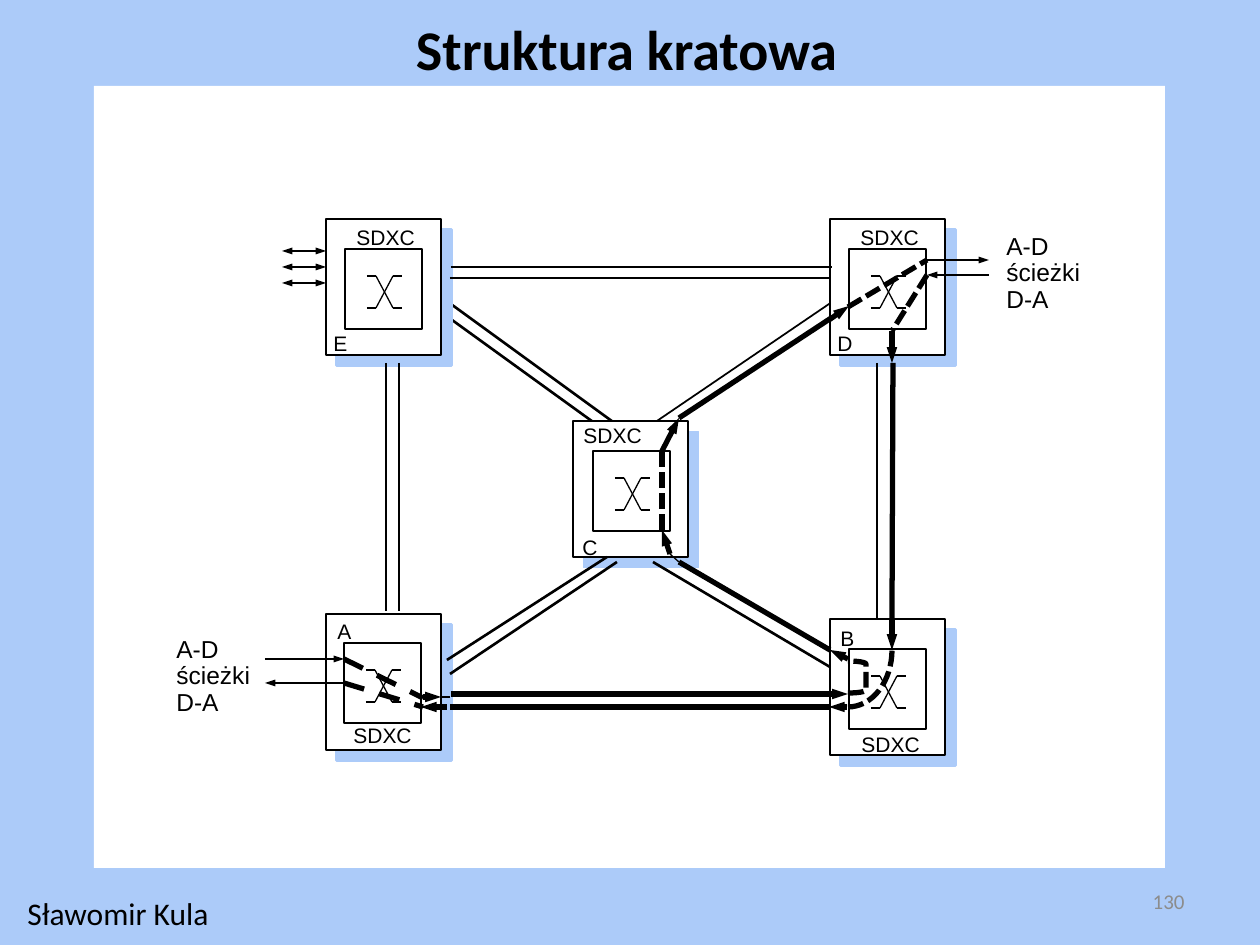
from dataclasses import dataclass
from math import cos, pi, sin
from typing import Optional

from lxml.etree import SubElement
from pptx import Presentation
from pptx.dml.color import RGBColor
from pptx.enum.dml import MSO_LINE
from pptx.enum.shapes import MSO_CONNECTOR, MSO_SHAPE
from pptx.enum.text import MSO_ANCHOR, MSO_AUTO_SIZE, PP_ALIGN
from pptx.oxml.ns import qn
from pptx.util import Emu, Pt

EMU_PER_PX = 914400 / 126
BLACK, WHITE, SKY, GREY = "000000", "FFFFFF", "ACCBF9", "8C8C8C"
DASH, DOT = MSO_LINE.DASH, MSO_LINE.SQUARE_DOT


@dataclass
class Node:
    name: str
    frame: tuple[int, int]
    switch: tuple[int, int]
    caption: tuple[int, int]
    letter: tuple[int, int]
    weight: float = 1.5


@dataclass
class Line:
    begin: tuple[int, int]
    end: tuple[int, int]
    weight: float = 1.5
    arrows: str = ""
    dash: Optional[MSO_LINE] = None
    begin_node: str = ""


@dataclass
class Label:
    text: str
    box: tuple[int, int, int, int]
    size: int
    font: str = "Arial"
    color: str = BLACK
    bold: bool = False


NODES = [
    Node("C", (573, 421), (593, 451), (571, 416), (570, 528), 0.75),
    Node("A", (326, 614), (344, 643), (341, 716), (325, 612)),
    Node("E", (326, 219), (345, 249), (344, 218), (321, 324)),
    Node("B", (830, 619), (849, 649), (849, 725), (828, 619)),
    Node("D", (830, 219), (849, 249), (848, 218), (825, 324)),
]
LINKS_BEHIND_NODES = [
    Line((832, 302), (654, 423), 1),
    Line((848, 307), (679, 418), 3),
    Line((444, 299), (620, 427)),
    Line((423, 299), (600, 427)),
]
LINKS = [
    Line((386, 363), (386, 611), 1),
    Line((399, 363), (399, 611), 1),
    Line((877, 363), (877, 619)),
    Line((893, 363), (892, 619), 3),
    Line((450, 707), (830, 707), 3),
    Line((451, 694), (832, 694), 3),
    Line((450, 278), (830, 278)),
    Line((451, 267), (832, 267)),
    Line((447, 660), (607, 557)),
    Line((617, 562), (450, 674)),
    Line((679, 562), (830, 650), 3),
    Line((653, 562), (830, 667)),
]
PORTS = [Line((282, y), (326, y), arrows="both") for y in (251, 267, 283)]
PATHS = [
    Line((265, 659), (344, 659), arrows="end"),
    Line((423, 697), (441, 697), 3, "end"),
    Line((344, 659), (423, 698), 3, dash=DASH),
    Line((830, 694), (848, 694), 3, "end"),
    Line((848, 659), (830, 650), 3, "end"),
    Line((670, 554), (662, 530), 3, "end"),
    Line((670, 554), (679, 562), 0.75),
    Line((450, 697), (441, 697), 0.75),
    Line((662, 530), (662, 451), 3, dash=DOT),
    Line((662, 451), (679, 418), 3, "end"),
    Line((829, 320), (849, 306), 3, "end"),
    Line((927, 260), (989, 260), arrows="end"),
    Line((848, 307), (927, 260), 3, dash=DOT),
    Line((989, 275), (927, 275), arrows="end"),
    Line((892, 331), (892, 363), 3, "end"),
    Line((927, 275), (892, 331), 3, dash=DOT),
    Line((847, 707), (829, 707), 3, "end"),
    Line((892, 619), (892, 650), 3, "end"),
    Line((447, 707), (421, 707), 3, "end"),
    Line((344, 683), (265, 683), arrows="end", begin_node="A"),
    Line((344, 683), (423, 707), 3, dash=DASH, begin_node="A"),
]
PATH_ENDS = "A-D\nścieżki\nD-A"
LABELS = [
    Label(PATH_ENDS, (164, 631, 100, 93), 14),
    Label(PATH_ENDS, (994, 228, 100, 93), 14),
    Label("Sławomir Kula", (15, 888, 209, 50), 18, "Calibri"),
]


def px(length: float) -> Emu:
    return Emu(round(length * EMU_PER_PX))


def color(value: str) -> RGBColor:
    return RGBColor.from_string(value)


def apply(target, values: dict) -> None:
    for name, value in values.items():
        setattr(target, name, value)


def set_line(shape, weight: float, dash: Optional[MSO_LINE] = None) -> None:
    shape.line.fill.solid()
    shape.line.color.rgb = color(BLACK)
    apply(shape.line, {"width": Pt(weight), "dash_style": dash})


def draw_rectangle(slide, box: tuple, weight: float = 0):
    shape = slide.shapes.add_shape(MSO_SHAPE.RECTANGLE, *map(px, box))
    shape.shadow.inherit = False
    shape.fill.solid()
    shape.fill.fore_color.rgb = color(WHITE)
    if weight:
        set_line(shape, weight)
    else:
        shape.line.fill.background()
    return shape


def add_sky_shadow(shape) -> None:
    effects = shape._element.spPr.find(qn("a:effectLst"))
    shadow = SubElement(effects, qn("a:outerShdw"), dist=str(Pt(8.5)),
                        dir="2700000", algn="ctr", rotWithShape="0")
    SubElement(shadow, qn("a:srgbClr"), val=SKY)


def draw_line(slide, line: Line, switches: dict) -> None:
    connector = slide.shapes.add_connector(
        MSO_CONNECTOR.STRAIGHT, *map(px, line.begin + line.end))
    set_line(connector, line.weight, line.dash)
    if line.begin_node:
        connector.begin_connect(switches[line.begin_node], 1)
    outline = connector.line._get_or_add_ln()
    tags = {"both": ("a:headEnd", "a:tailEnd"), "end": ("a:tailEnd",), "": ()}
    for tag in tags[line.arrows]:
        SubElement(outline, qn(tag), type="triangle", w="sm", len="med")
    SubElement(connector._element.spPr, qn("a:effectLst"))


def draw_label(slide, label: Label):
    shape = slide.shapes.add_textbox(*map(px, label.box))
    frame = shape.text_frame
    apply(frame, {"text": label.text, "word_wrap": False,
                  "auto_size": MSO_AUTO_SIZE.SHAPE_TO_FIT_TEXT})
    for paragraph in frame.paragraphs:
        if len(frame.paragraphs) > 1:
            paragraph.line_spacing = 0.9
        apply(paragraph.font, {"size": Pt(label.size), "name": label.font, "bold": label.bold})
        paragraph.font.color.rgb = color(label.color)
    return frame


def draw_node(slide, node: Node):
    add_sky_shadow(draw_rectangle(slide, (*node.frame, 115, 136), node.weight))
    switch = draw_rectangle(slide, (*node.switch, 77, 80), 0.75)
    left, top = node.switch[0] + 22, node.switch[1] + 27
    x1, x2, x3, x4 = (left + step for step in (0, 9, 26, 35))
    bottom = top + 32
    for y in (top, bottom):
        for start, stop in ((x1, x2), (x3, x4)):
            draw_line(slide, Line((start, y), (stop, y), 0.75), {})
    for start, stop in ((x2, x3), (x3, x2)):
        draw_line(slide, Line((start, top), (stop, bottom), 0.75), {})
    draw_label(slide, Label("SDXC", (*node.caption, 84, 38), 12))
    return switch


def draw_turns_in_b(slide) -> None:
    bracket = slide.shapes.add_shape(MSO_SHAPE.LEFT_BRACKET, *map(px, (848, 661, 18, 32)))
    bracket.adjustments[0] = 0.167
    bracket._element.spPr.xfrm.set("flipH", "1")
    angles = [pi / 2 * step / 16 for step in range(17)]
    points = [(px(848 + 44 * sin(angle)), px(650 + 57 * cos(angle))) for angle in angles]
    builder = slide.shapes.build_freeform(*points[0])
    builder.add_line_segments(points[1:], close=False)
    for shape in (bracket, builder.convert_to_shape()):
        shape.shadow.inherit = False
        shape.fill.background()
        set_line(shape, 3, DOT)


def main() -> None:
    presentation = Presentation()
    apply(presentation, {"slide_width": px(1260), "slide_height": px(945)})
    slide = presentation.slides.add_slide(presentation.slide_layouts[6])
    slide.background.fill.solid()
    slide.background.fill.fore_color.rgb = color(SKY)
    number = draw_label(slide, Label("130", (903, 876, 294, 50), 12, "Calibri", GREY))
    apply(number, {"word_wrap": True, "auto_size": MSO_AUTO_SIZE.NONE,
                   "vertical_anchor": MSO_ANCHOR.MIDDLE})
    number.paragraphs[0].alignment = PP_ALIGN.RIGHT
    draw_rectangle(slide, (94, 86, 1071, 782))
    title = draw_label(slide, Label("Struktura kratowa", (416, 15, 438, 68), 32,
                                    "Calibri", bold=True))
    apply(title, {f"margin_{side}": 0 for side in ("left", "top", "right", "bottom")})
    for line in LINKS_BEHIND_NODES:
        draw_line(slide, line, {})
    switches = {node.name: draw_node(slide, node) for node in NODES}
    for line in LINKS + PORTS + PATHS:
        draw_line(slide, line, switches)
    draw_turns_in_b(slide)
    letters = [Label(node.name, (*node.letter, 39, 38), 12) for node in NODES]
    for label in letters + LABELS:
        draw_label(slide, label)
    presentation.save("out.pptx")


if __name__ == "__main__":
    main()
